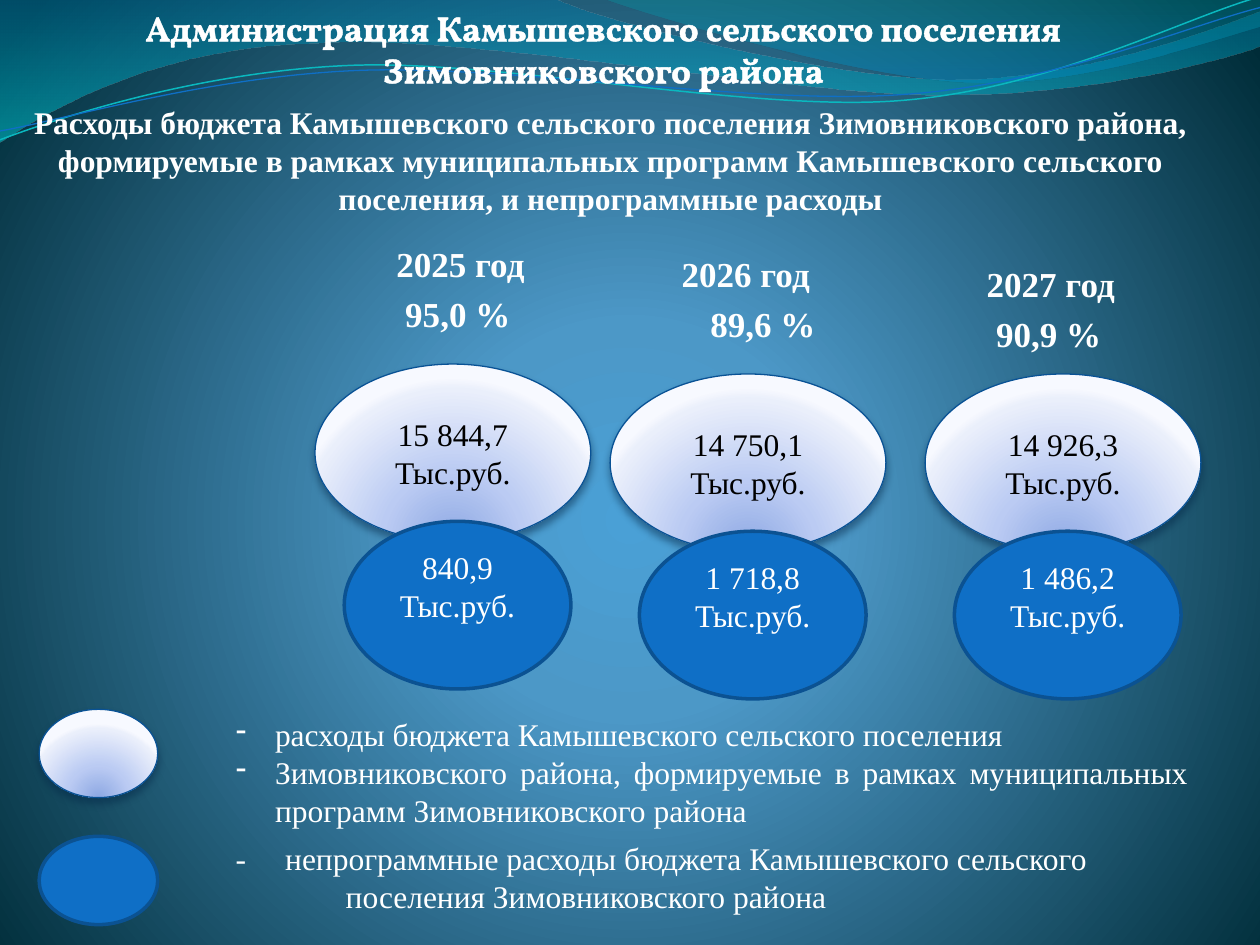
from pptx import Presentation
from pptx import util as u
from pptx.dml.color import RGBColor
from pptx.enum import shapes, text
from pptx.oxml import parse_xml
from pptx.oxml.ns import nsdecls, qn

Cm, Pt = u.Cm, u.Pt
ALIGN = text.PP_ALIGN
SERIF = "Times New Roman"
COLORS = {
    "white": "FFFFFF", "black": "000000", "blue": "0F6FC6",
    "blue_edge": "0B5292", "pale_edge": "095295", "cyan": "0AB8BF",
    "shadow": "042747",
}
# Gradient stops: position %, colour, opacity %
BACKGROUND = [(0, "4AA0D6", 100), (25, "4C98C7", 100), (100, "002C38", 100)]
PALE = [(0, "8DA8E3", 100), (43, "BBCBF3", 100), (93, "EAEFFB", 100), (100, "F7F9FF", 100)]
WAVE_LEFT = [(0, "0074A1", 45), (100, "00C6CF", 55)]
WAVE_RIGHT = [(0, "00A1A9", 30), (80, "008BBF", 45)]

# Left, top of the pale ellipse; year and percent offsets from it; wording
COLUMNS = [
    (6.35, 7.34, 1.39, 1, -2.57, "2025 год", "95,0 %", "15 844,7", "840,9"),
    (12.3, 7.54, 1.19, 1.2, -2.57, "2026 год", "89,6 %", "14 750,1", "1 718,8"),
    (18.65, 7.54, 0.99, 0.61, -2.37, "2027 год", "90,9 %", "14 926,3", "1 486,2"),
]


def rgb(name):
    return RGBColor.from_string(COLORS[name])


def set_gradient(fill, element, stops, rect=None):
    """Circular gradient towards rect (l, t, r, b in %), else top to bottom."""
    fill.gradient()
    stop_xml = "".join(
        f'<a:gs pos="{pos * 1000}"><a:srgbClr val="{color}">'
        f'<a:alpha val="{opacity * 1000}"/></a:srgbClr></a:gs>'
        for pos, color, opacity in stops)
    if rect:
        sides = " ".join(f'{side}="{value * 1000}"' for side, value in zip("ltrb", rect))
        direction = f'<a:path path="circle"><a:fillToRect {sides}/></a:path>'
    else:
        direction = '<a:lin ang="5400000" scaled="0"/>'
    old = element.find(".//" + qn("a:gradFill"))
    old.getparent().replace(old, parse_xml(
        f'<a:gradFill {nsdecls("a")} rotWithShape="1"><a:gsLst>{stop_xml}</a:gsLst>'
        f'{direction}</a:gradFill>'))


def write(shape, lines, size, color="white", bold=False, align=ALIGN.CENTER,
          anchor=text.MSO_ANCHOR.TOP, font=SERIF):
    frame = shape.text_frame
    frame.text = "\n".join(lines)
    frame.word_wrap = True
    frame.auto_size = text.MSO_AUTO_SIZE.NONE
    frame.vertical_anchor = anchor
    for paragraph in frame.paragraphs:
        paragraph.alignment = align
        paragraph.space_before = Pt(0)
        for run in paragraph.runs:
            run.font.size, run.font.name, run.font.bold = Pt(size), font, bold
            run.font.color.rgb = rgb(color)
    return shape


def place(shape, left, top, width, height):
    shape.left, shape.top, shape.width, shape.height = map(Cm, (left, top, width, height))
    return shape


def add_text(slide, box, lines, size, **style):
    return write(slide.shapes.add_textbox(*map(Cm, box)), lines, size, **style)


def set_indent(paragraph, left, hanging=0, bullet=None):
    properties = paragraph._p.get_or_add_pPr()
    properties.set("marL", str(Cm(left)))
    properties.set("indent", str(-Cm(hanging)))
    if bullet:
        properties.append(parse_xml(f'<a:buFontTx {nsdecls("a")}/>'))
        properties.append(parse_xml(f'<a:buChar {nsdecls("a")} char="{bullet}"/>'))


def add_ellipse(slide, box, pale):
    shape = slide.shapes.add_shape(shapes.MSO_SHAPE.OVAL, *map(Cm, box))
    shape.shadow.inherit = False
    if pale:
        set_gradient(shape.fill, shape.element, PALE, (50, 130, 50, -30))
        shape.element.find(".//" + qn("a:effectLst")).append(parse_xml(
            f'<a:outerShdw {nsdecls("a")} blurRad="{Pt(4.5)}" dist="{Pt(3)}" dir="5400000" '
            f'rotWithShape="0"><a:srgbClr val="{COLORS["shadow"]}"><a:alpha val="48000"/>'
            '</a:srgbClr></a:outerShdw>'))
    else:
        shape.fill.solid()
        shape.fill.fore_color.rgb = rgb("blue")
    shape.line.color.rgb = rgb("pale_edge" if pale else "blue_edge")
    shape.line.width = Pt(0.75 if pale else 2)
    return shape


def add_wave(slide, start, segments, stops=None, line=None, width=0):
    """Outline in hundredths of an inch; six numbers make a curve, two a line."""
    points = [segment[i:i + 2] for segment in segments for i in range(0, len(segment), 2)]
    builder = slide.shapes.build_freeform(*start, scale=Cm(0.0254))
    builder.add_line_segments(points, close=bool(stops))
    shape = builder.convert_to_shape()
    # Join each three straight steps of a curve into one Bezier segment
    steps = iter(list(shape.element.iter(qn("a:lnTo"))))
    for segment in segments:
        step = next(steps)
        if len(segment) == 6:
            bezier = parse_xml(f'<a:cubicBezTo {nsdecls("a")}/>')
            step.addprevious(bezier)
            for corner in (step, next(steps), next(steps)):
                bezier.append(corner[0])
                corner.getparent().remove(corner)
    shape.shadow.inherit = False
    if stops:
        set_gradient(shape.fill, shape.element, stops)
        shape.line.fill.background()
    else:
        shape.fill.background()
        shape.line.color.rgb = rgb(line)
        shape.line.width = Pt(width)
    slide.shapes.title.element.addprevious(shape.element)


def add_waves(slide):
    add_wave(slide, (0, 0), [
        (440, -1), (476, 17, 664, 63, 758, 63), (853, 63, 958, 26, 1000, 9), (1001, 36),
        (983, 44, 870, 76, 746, 75), (622, 75, 382, 28, 257, 34),
        (129, 36, 46, 83, -1, 113), (0, 0)], WAVE_LEFT)
    add_wave(slide, (479, -1), [
        (509, 11, 682, 62, 769, 65), (856, 69, 961, 32, 1000, 21),
        (1000, 0), (479, -1)], WAVE_RIGHT)
    add_wave(slide, (0, 111), [
        (48, 93, 158, 57, 277, 52), (395, 47, 593, 89, 713, 80),
        (833, 71, 938, 15, 998, -2)], line="cyan", width=0.85)
    add_wave(slide, (0, 104), [
        (47, 96, 164, 61, 283, 56), (403, 51, 597, 84, 717, 75),
        (836, 67, 941, 21, 1000, 6)], line="blue", width=0.75)


def add_heading(slide):
    title = place(slide.shapes.title, 1.7, 0, 20.93, 1.96)
    write(title, ["Администрация Камышевского сельского поселения Зимовниковского района"],
          20, bold=True, font="Vollkorn")
    for properties in title.element.iter(qn("a:rPr")):
        properties.insert(0, parse_xml(
            f'<a:ln {nsdecls("a")} w="{Pt(1.45)}"><a:solidFill>'
            f'<a:srgbClr val="{COLORS["white"]}"/></a:solidFill></a:ln>'))
    add_text(slide, (0.41, 1.96, 23.8, 2.57), [
        "Расходы бюджета Камышевского сельского поселения Зимовниковского района, "
        "формируемые в рамках муниципальных программ Камышевского сельского поселения, "
        "и непрограммные расходы"], 18, bold=True)


def add_year_column(slide, left, top, year_x, percent_x, label_y, year, percent, program, other):
    add_text(slide, (left + year_x, top + label_y, 3.76, 1.11), [year], 20,
             bold=True, align=ALIGN.LEFT)
    add_text(slide, (left + percent_x, top + label_y + 1, 3.76, 1.11), [percent], 20, bold=True)
    middle = text.MSO_ANCHOR.MIDDLE
    pale = add_ellipse(slide, (left, top, 5.56, 3.58), True)
    write(pale, [program, "Тыс.руб."], 18, "black", anchor=middle)
    blue = add_ellipse(slide, (left + 0.59, top + 3.17, 4.57, 3.38), False)
    write(blue, [other, "Тыс.руб."], 18, anchor=middle)
    blue.text_frame.margin_bottom = Cm(0.89)


def add_legend(slide, left, top):
    text_left = left + 3.71
    add_ellipse(slide, (left, top, 2.39, 1.78), True)
    add_ellipse(slide, (left, top + 2.56, 2.39, 1.78), False)
    program = place(slide.placeholders[1], text_left, top - 0.01, 19.71, 2.57)
    write(program, [
        "расходы бюджета Камышевского сельского поселения",
        "Зимовниковского района, формируемые в рамках муниципальных программ "
        "Зимовниковского района"], 18, align=ALIGN.JUSTIFY)
    for paragraph in program.text_frame.paragraphs:
        set_indent(paragraph, 0.79, 0.79, "-")
    other = add_text(slide, (text_left, top + 2.49, 19.76, 1.8), [
        "-\tнепрограммные расходы бюджета Камышевского сельского",
        "поселения Зимовниковского района"], 18, align=ALIGN.LEFT)
    first, second = other.text_frame.paragraphs
    set_indent(first, 1, 1)
    set_indent(second, 2.22)


def main():
    presentation = Presentation()
    presentation.slide_width, presentation.slide_height = Cm(25.4), Cm(19.05)
    slide = presentation.slides.add_slide(presentation.slide_layouts[1])
    set_gradient(slide.background.fill, slide.element, BACKGROUND, (10, 110, 10, 100))
    add_waves(slide)
    add_heading(slide)
    for column in COLUMNS:
        add_year_column(slide, *column)
    add_legend(slide, 0.79, 14.3)
    presentation.save("out.pptx")


if __name__ == "__main__":
    main()
